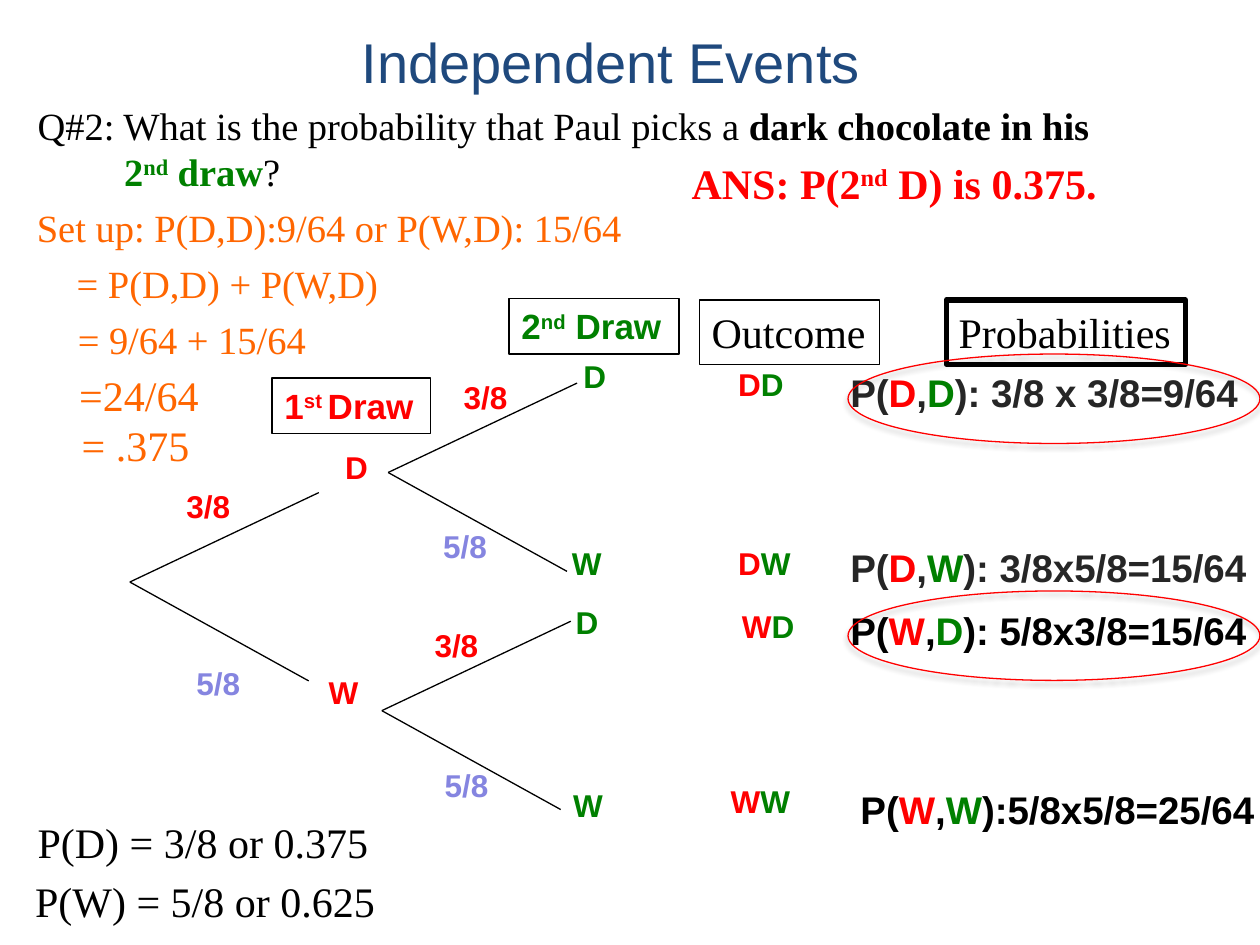
"""Build a slide with a two-draw probability tree and its worked answer."""
from dataclasses import dataclass

import lxml.etree
import pptx
import pptx.dml.color
import pptx.enum.shapes
import pptx.enum.text
import pptx.oxml
import pptx.oxml.ns
import pptx.util

Pt = pptx.util.Pt
SANS, SERIF = "Arial", "Times New Roman"
COLORS = {
    "black": "000000", "ink": "262626", "title": "1F497D", "red": "FF0000",
    "green": "008000", "violet": "8585E0", "orange": "FF6600",
}


@dataclass(frozen=True)
class Piece:
    text: str
    color: str = "black"
    bold: bool = False
    raised: bool = False


@dataclass(frozen=True)
class Label:
    left: float
    top: float
    width: float
    height: float
    lines: tuple[tuple[Piece, ...], ...]
    size: float
    font: str = SERIF
    outline: float = 0
    hanging: float = 0
    wrap: bool = False


@dataclass(frozen=True)
class Outcome:
    first: str
    second: str
    code_left: float
    code_top: float
    code_width: float
    left: float
    top: float
    width: float
    formula: str
    ink: str
    wrap: bool = False


@dataclass(frozen=True)
class Fork:
    left: float
    top: float
    upper_label: tuple[float, float]
    lower_label: tuple[float, float]


FORKS = (
    Fork(74.2, 332.6, (99.4, 275), (105.1, 375.8)),
    Fork(221.8, 270, (257.8, 212.4), (246.2, 297.4)),
    Fork(218.2, 406.1, (241.2, 354.2), (247, 434.2)),
)
OUTCOMES = (
    Outcome("D", "D", 414.7, 205.2, 41, 478.8, 207.4, 238.3, "): 3/8 x 3/8=9/64", "ink"),
    Outcome("D", "W", 414.7, 307.4, 44.6, 478.8, 307.4, 243.4, "): 3/8x5/8=15/64", "ink"),
    Outcome("W", "D", 416.9, 343.4, 44.6, 478.8, 343.4, 242, "): 5/8x3/8=15/64", "black"),
    Outcome("W", "W", 410.4, 443.5, 49, 484.6, 445.7, 254.9, "):5/8x5/8=25/64", "black", True),
)
NODES = (
    ("D", "red", 190.1, 252.7), ("W", "red", 180.7, 380.9),
    ("D", "green", 326.2, 200.2), ("W", "green", 319.7, 307.4),
    ("D", "green", 321.8, 341.3), ("W", "green", 320.4, 445.7),
)
NODE_WIDTHS = {"D": 27.4, "W": 31.7}


def plain(left: float, top: float, width: float, text: str, color: str,
          size: float, outline: float = 0) -> Label:
    """Describe a one-line serif label."""
    height = 36.7 if size == 24 else 33.8
    return Label(left, top, width, height, ((Piece(text, color),),), size, outline=outline)


def draw_heading(left: float, top: float, width: float, color: str,
                 number: str, suffix: str, word: str) -> Label:
    """Describe the boxed heading above one column of the tree."""
    pieces = (Piece(number, color, True), Piece(suffix, color, True, True),
              Piece(word, color, True))
    return Label(left, top, width, 31.7, (pieces,), 20, SANS, 0.75)


LABELS = (
    draw_heading(290.9, 170.6, 97.2, "green", "2", "nd", " Draw"),
    draw_heading(155.5, 216, 90.7, "red", "1", "st ", "Draw"),
    plain(399.6, 171.4, 103, "Outcome", "black", 24, 0.75),
    plain(540.7, 171.4, 136.8, "Probabilities", "black", 24, 3),
    plain(14.4, 463, 205.2, "P(D) = 3/8 or 0.375", "black", 24),
    plain(13, 496.8, 211, "P(W) = 5/8 or 0.625", "black", 24),
    plain(14, 113, 348.7, "Set up: P(D,D):9/64 or P(W,D): 15/64", "orange", 22),
    plain(36.7, 145, 188.6, "= P(D,D) + P(W,D)", "orange", 22),
    plain(37.4, 177.1, 146.2, "= 9/64 + 15/64", "orange", 22),
    plain(38.2, 207.4, 83.5, "=24/64", "orange", 24),
    plain(39.6, 236.2, 77, "= .375", "orange", 24),
    Label(14.4, 54.7, 622.8, 60.5, (
        (Piece("Q#2: What is the probability that Paul picks a "),
         Piece("dark chocolate in his", bold=True)),
        (Piece("2", "green", True), Piece("nd", "green", True, True),
         Piece(" draw", "green", True), Piece("?")),
    ), 22, hanging=49.5),
    Label(388.1, 86.4, 250.6, 36.7, ((
        Piece("ANS: P(2", "red", True), Piece("nd", "red", True, True),
        Piece(" D) is 0.375.", "red", True)),), 24),
)


def rgb(name: str) -> pptx.dml.color.RGBColor:
    """Look up a named colour."""
    return pptx.dml.color.RGBColor.from_string(COLORS[name])


def add_label(slide, label: Label):
    """Add a label, outlined when it has a line width."""
    box = (Pt(label.left), Pt(label.top), Pt(label.width), Pt(label.height))
    if label.outline:
        shape = slide.shapes.add_shape(pptx.enum.shapes.MSO_SHAPE.RECTANGLE, *box)
        shape.shadow.inherit = False
        shape.fill.background()
        shape.line.color.rgb = rgb("black")
        shape.line.width = Pt(label.outline)
    else:
        shape = slide.shapes.add_textbox(*box)
    text_frame = shape.text_frame
    text_frame.word_wrap = label.wrap
    text_frame.auto_size = pptx.enum.text.MSO_AUTO_SIZE.SHAPE_TO_FIT_TEXT
    text_frame.vertical_anchor = pptx.enum.text.MSO_ANCHOR.TOP
    for index, pieces in enumerate(label.lines):
        paragraph = text_frame.add_paragraph() if index else text_frame.paragraphs[0]
        paragraph.alignment = pptx.enum.text.PP_ALIGN.LEFT
        if index and label.hanging:
            paragraph._p.get_or_add_pPr().set("marL", str(Pt(label.hanging)))
        for piece in pieces:
            run = paragraph.add_run()
            run.text = piece.text
            run.font.name, run.font.size = label.font, Pt(label.size)
            run.font.bold, run.font.color.rgb = piece.bold, rgb(piece.color)
            if piece.raised:
                run._r.get_or_add_rPr().set("baseline", "30000")
    return shape


def add_fork(slide, fork: Fork) -> None:
    """Add two branches from one point with their probabilities."""
    branches = ((108, -51.1, "3/8", "red", fork.upper_label),
                (102.2, 56.5, "5/8", "violet", fork.lower_label))
    for across, down, text, color, (left, top) in branches:
        connector = slide.shapes.add_connector(
            pptx.enum.shapes.MSO_CONNECTOR.STRAIGHT, Pt(fork.left), Pt(fork.top),
            Pt(fork.left + across), Pt(fork.top + down))
        connector.line.color.rgb = rgb("black")
        connector.line.width = Pt(0.75)
        lxml.etree.SubElement(connector._element.spPr, pptx.oxml.ns.qn("a:effectLst"))
        add_label(slide, Label(left, top, 39.6, 28.8, ((Piece(text, color, True),),), 18, SANS))


def add_outcome(slide, outcome: Outcome) -> None:
    """Add an outcome code and its probability."""
    first, second = Piece(outcome.first, "red", True), Piece(outcome.second, "green", True)
    add_label(slide, Label(outcome.code_left, outcome.code_top, outcome.code_width, 28.8,
                           ((first, second),), 18, SANS))
    pieces = (Piece("P(", outcome.ink, True), first, Piece(",", outcome.ink, True),
              second, Piece(outcome.formula, outcome.ink, True))
    add_label(slide, Label(outcome.left, outcome.top, outcome.width, 33.8, (pieces,), 22, SANS,
                           wrap=outcome.wrap))


def add_ring(slide, top: float) -> None:
    """Add a red ellipse with a soft shadow."""
    ring = slide.shapes.add_shape(pptx.enum.shapes.MSO_SHAPE.OVAL,
                                  Pt(484.6), Pt(top), Pt(235.4), Pt(51.1))
    ring.fill.background()
    ring.line.color.rgb = rgb("red")
    ring.line.width = Pt(0.75)
    ring.shadow.inherit = False
    effects = ring._element.spPr.find(pptx.oxml.ns.qn("a:effectLst"))
    effects.append(pptx.oxml.parse_xml(
        f'<a:outerShdw {pptx.oxml.ns.nsdecls("a")} blurRad="{Pt(3.1)}" dist="{Pt(1.8)}" '
        f'dir="5400000" rotWithShape="0"><a:srgbClr val="{COLORS["black"]}">'
        '<a:alpha val="35000"/></a:srgbClr></a:outerShdw>'))


def main() -> None:
    """Build and save the presentation."""
    presentation = pptx.Presentation()
    presentation.slide_width, presentation.slide_height = Pt(720), Pt(540)
    slide = presentation.slides.add_slide(presentation.slide_layouts[6])
    title = slide.shapes.add_textbox(Pt(25.2), Pt(3.6), Pt(648), Pt(62.6))
    title.text_frame.word_wrap = True
    title.text_frame.vertical_anchor = pptx.enum.text.MSO_ANCHOR.MIDDLE
    title.text_frame.text = "Independent Events"
    paragraph = title.text_frame.paragraphs[0]
    paragraph.alignment = pptx.enum.text.PP_ALIGN.CENTER
    font = paragraph.runs[0].font
    font.name, font.size, font.color.rgb = SANS, Pt(32), rgb("title")
    for fork in FORKS:
        add_fork(slide, fork)
    for text, color, left, top in NODES:
        add_label(slide, Label(left, top, NODE_WIDTHS[text], 28.8,
                               ((Piece(text, color, True),),), 18, SANS))
    for outcome in OUTCOMES:
        add_outcome(slide, outcome)
    for label in LABELS:
        add_label(slide, label)
    for top in (202.3, 337.7):
        add_ring(slide, top)
    presentation.save("out.pptx")


if __name__ == "__main__":
    main()
